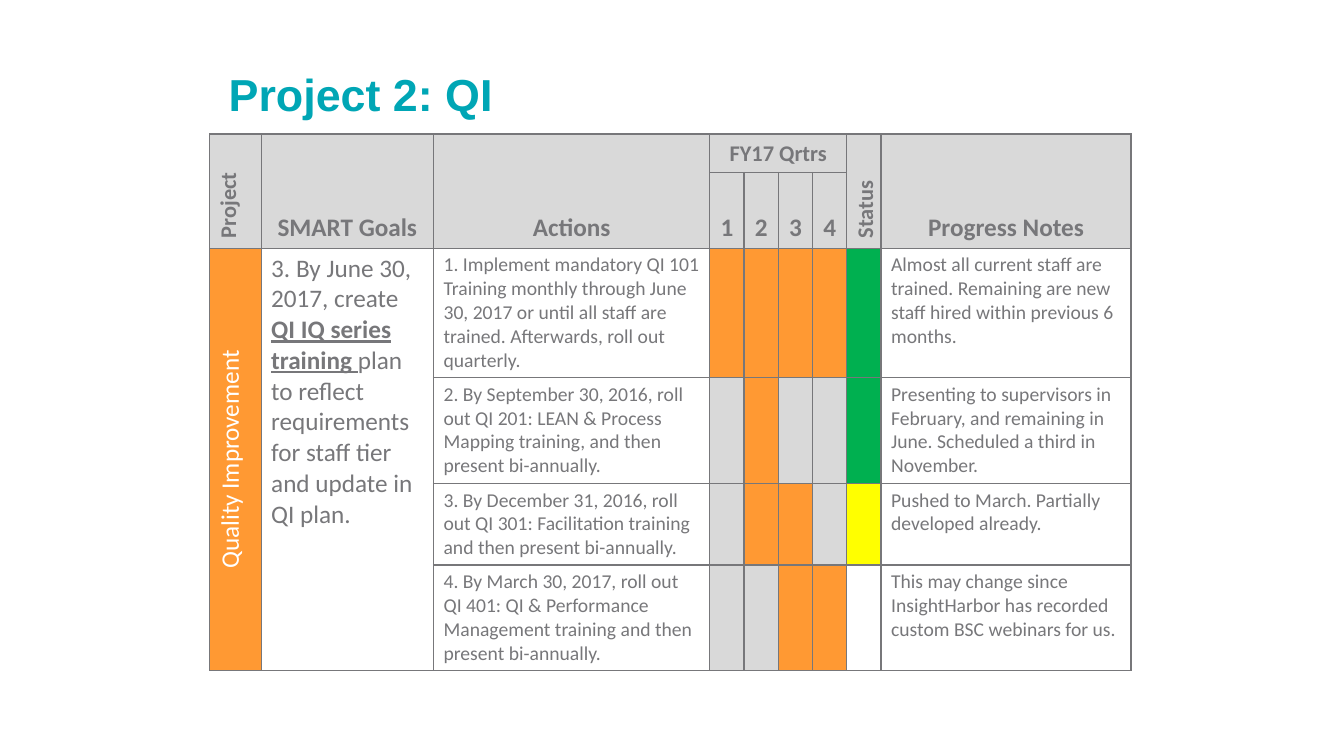
"""Build the Project 2: QI progress table slide."""
from dataclasses import dataclass, field
from typing import Any

from lxml.etree import SubElement
from pptx import Presentation
from pptx.dml.color import RGBColor
from pptx.enum.text import MSO_ANCHOR, PP_ALIGN
from pptx.oxml.ns import qn
from pptx.util import Inches, Pt

COLORS = {
    "gray": "77777A", "head": "D9D9D9", "orange": "FF9933", "green": "00B050",
    "yellow": "FFFF00", "white": "FFFFFF", "teal": "00A6B5",
}
WIDTHS = [0.51, 1.71, 2.74] + [0.34] * 5 + [2.48]
HEIGHTS = [0.38, 0.75, 1.28, 1.05, 0.81, 1.05]
STATUS, NOTES = 7, 8


@dataclass
class Run:
    text: str
    size: int = 14
    color: str = "gray"
    name: str = "Calibri"
    marks: dict[str, bool] = field(default_factory=dict)


@dataclass
class Box:
    row: int
    col: int
    runs: list[Run]
    align: Any = PP_ALIGN.LEFT
    anchor: Any = MSO_ANCHOR.TOP
    span: tuple[int, int] = (1, 1)
    turned: bool = False


@dataclass
class Action:
    text: str
    quarters: set[int]
    status: str
    note: str


BOLD = {"bold": True}
CENTER, LOW, MID = PP_ALIGN.CENTER, MSO_ANCHOR.BOTTOM, MSO_ANCHOR.MIDDLE

ACTIONS = [
    Action("1. Implement mandatory QI 101 Training monthly through June 30, 2017 "
           "or until all staff are trained. Afterwards, roll out quarterly.",
           {1, 2, 3, 4}, "green",
           "Almost all current staff are trained. Remaining are new staff hired "
           "within previous 6 months."),
    Action("2. By September 30, 2016, roll out QI 201: LEAN & Process Mapping "
           "training, and then present bi-annually.", {2}, "green",
           "Presenting to supervisors in February, and remaining in June. "
           "Scheduled a third in November."),
    Action("3. By December 31, 2016, roll out QI 301: Facilitation training and "
           "then present bi-annually.", {2, 3}, "yellow",
           "Pushed to March. Partially developed already."),
    Action("4. By March 30, 2017, roll out QI 401: QI & Performance Management "
           "training and then present bi-annually.", {3, 4}, "white",
           "This may change since InsightHarbor has recorded custom BSC webinars "
           "for us."),
]
GOAL = [
    Run("3. By June 30, 2017, create ", 18),
    Run("QI IQ series training ", 18, marks={"bold": True, "underline": True}),
    Run("plan to reflect requirements for staff tier and update in QI plan.", 18),
]


def head(row: int, col: int, text: str, size: int = 18,
         span: tuple[int, int] = (2, 1)) -> Box:
    """Describe a centred heading."""
    return Box(row, col, [Run(text, size, marks=BOLD)], CENTER, LOW, span)


def side(col: int, text: str) -> Box:
    """Describe a turned heading."""
    return Box(0, col, [Run(text, 16, marks=BOLD)], anchor=MID, span=(2, 1),
               turned=True)


BOXES = [
    side(0, "Project"), head(0, 1, "SMART Goals"), head(0, 2, "Actions"),
    head(0, 3, "FY17 Qrtrs", 16, (1, 4)), side(STATUS, "Status"),
    head(0, NOTES, "Progress Notes"),
    *[head(1, 2 + n, str(n), span=(1, 1)) for n in range(1, 5)],
    Box(2, 0, [Run("Quality Improvement", 18, "white")], CENTER, MID, (4, 1), True),
    Box(2, 1, GOAL, span=(4, 1)),
    *[Box(row, col, [Run(text)]) for row, act in enumerate(ACTIONS, 2)
      for col, text in ((2, act.text), (NOTES, act.note))],
]


def tint(row: int, col: int) -> str:
    """Return the fill name of a cell."""
    if row < 2:
        return "head"
    act = ACTIONS[row - 2]
    if col == 0:
        return "orange"
    if col == STATUS:
        return act.status
    if 3 <= col < STATUS:
        return "orange" if col - 2 in act.quarters else "head"
    return "white"


def write(frame: Any, runs: list[Run], align: Any) -> None:
    """Write formatted runs into the first paragraph."""
    para = frame.paragraphs[0]
    para.alignment = align
    for item in runs:
        run = para.add_run()
        run.text = item.text
        style = {"name": item.name, "size": Pt(item.size), "bold": False} | item.marks
        for key, value in style.items():
            setattr(run.font, key, value)
        run.font.color.rgb = RGBColor.from_string(COLORS[item.color])


def paint(cell: Any, color: str) -> None:
    """Give a cell its borders and fill."""
    props = cell._tc.get_or_add_tcPr()
    for edge in "LRTB":
        line = SubElement(props, qn(f"a:ln{edge}"), w=str(Pt(1)))
        fill = SubElement(line, qn("a:solidFill"))
        SubElement(fill, qn("a:srgbClr"), val=COLORS["gray"])
    cell.fill.solid()
    cell.fill.fore_color.rgb = RGBColor.from_string(COLORS[color])


def place(table: Any, box: Box) -> None:
    """Merge and write one described cell."""
    cell = table.cell(box.row, box.col)
    high, wide = box.span
    if box.span != (1, 1):
        cell.merge(table.cell(box.row + high - 1, box.col + wide - 1))
    cell.vertical_anchor = box.anchor
    if box.turned:
        cell._tc.get_or_add_tcPr().set("vert", "vert270")
    write(cell.text_frame, box.runs, box.align)


def main() -> None:
    """Build and save the slide."""
    deck = Presentation()
    deck.slide_width, deck.slide_height = Inches(13.33), Inches(7.5)
    slide = deck.slides.add_slide(deck.slide_layouts[6])

    grid = slide.shapes.add_table(
        len(HEIGHTS), len(WIDTHS), Inches(2.08), Inches(1.33),
        Inches(sum(WIDTHS)), Inches(sum(HEIGHTS)))
    table = grid.table
    for key, value in {"first_row": False, "horz_banding": False}.items():
        setattr(table, key, value)
    for col, width in zip(table.columns, WIDTHS):
        col.width = Inches(width)
    for row, height in zip(table.rows, HEIGHTS):
        row.height = Inches(height)
    for row in range(len(HEIGHTS)):
        for col in range(len(WIDTHS)):
            paint(table.cell(row, col), tint(row, col))
    for box in BOXES:
        place(table, box)

    title = slide.shapes.add_textbox(Inches(2.17), Inches(0.3), Inches(9), Inches(1.25))
    frame = title.text_frame
    for key, value in {"word_wrap": True, "vertical_anchor": MID}.items():
        setattr(frame, key, value)
    write(frame, [Run("Project 2: QI", 32, "teal", "Arial", BOLD)], PP_ALIGN.LEFT)
    deck.save("out.pptx")


if __name__ == "__main__":
    main()
